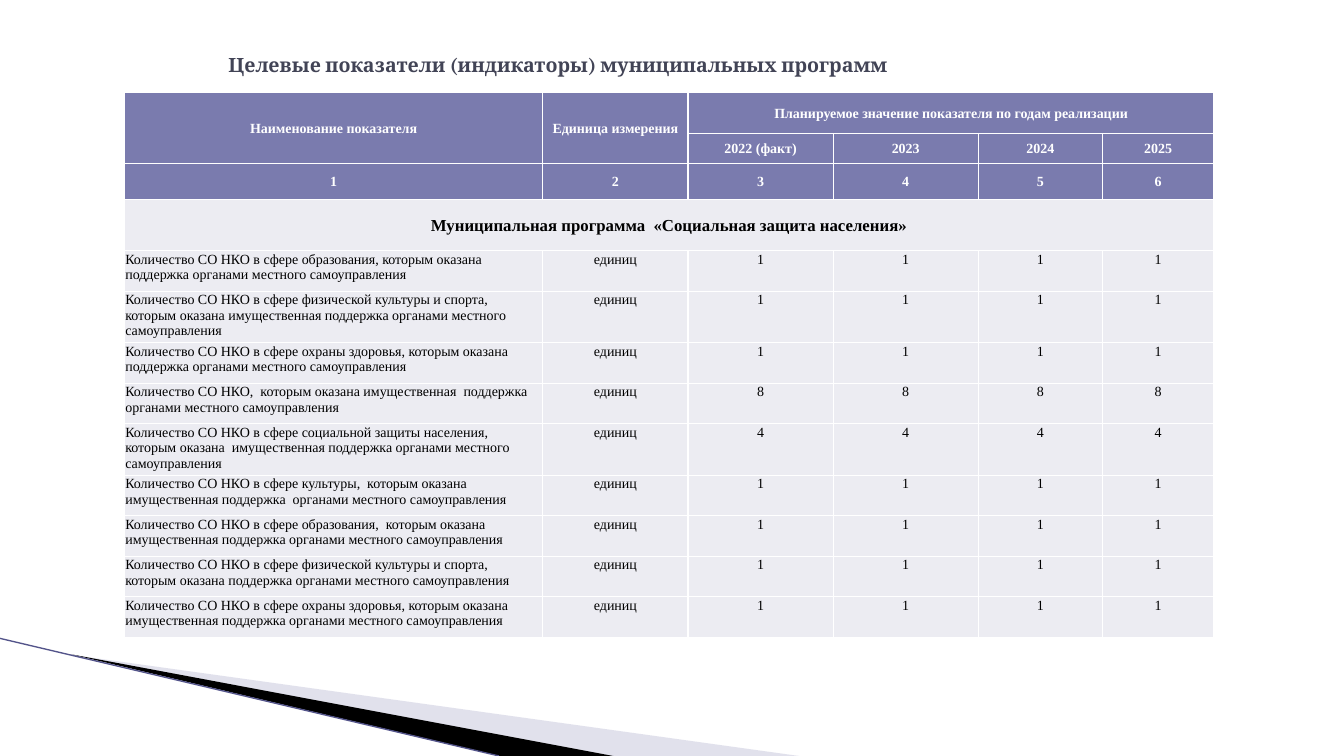
from lxml.etree import SubElement
from pptx import Presentation
from pptx.dml.color import RGBColor
from pptx.enum.shapes import MSO_CONNECTOR
from pptx.enum.text import MSO_ANCHOR, PP_ALIGN
from pptx.oxml.ns import qn
from pptx.util import Inches, Pt

COLORS = {
    "title": "424456",
    "header": "7A7BAE",
    "body": "ECECF2",
    "white": "FFFFFF",
    "black": "000000",
    "wedge": "B6B6D1",
    "edge": "53548A",
}
COLUMN_WIDTHS = [49.8, 17.28, 17.28, 17.28, 14.76, 13.3]
ROW_HEIGHTS = [4.9, 3.5, 4.32, 6.1] + [4.82] * 9
HEADER_ROWS = [
    ["Наименование показателя", "Единица измерения",
     "Планируемое значение показателя по годам реализации", "", "", ""],
    ["", "", "2022 (факт)", "2023", "2024", "2025"],
    [str(number) for number in range(1, 7)],
]
PROGRAM = "Муниципальная программа  «Социальная защита населения»"
INDICATORS = [
    ("в сфере образования, которым оказана поддержка органами", 1),
    ("в сфере физической культуры и спорта,  которым оказана имущественная поддержка органами", 1),
    ("в сфере охраны здоровья, которым оказана поддержка органами", 1),
    (",  которым оказана имущественная  поддержка органами", 8),
    ("в сфере социальной защиты населения,  которым оказана  имущественная поддержка органами", 4),
    ("в сфере культуры,  которым оказана  имущественная поддержка  органами", 1),
    ("в сфере образования,  которым оказана имущественная поддержка органами", 1),
    ("в сфере физической культуры и спорта, которым оказана поддержка органами", 1),
    ("в сфере охраны здоровья, которым оказана имущественная поддержка органами", 1),
]
MERGES = [(0, 0, 1, 0), (0, 1, 1, 1), (0, 2, 0, 5), (3, 0, 3, 5)]


class SlideBuilder:
    """Draws styled elements on one slide laid out in 160 columns by 90 rows."""

    unit = Inches(1) / 12
    title_font = "Cambria"
    table_font = "Times New Roman"

    def __init__(self, presentation):
        self.slide = presentation.slides.add_slide(presentation.slide_layouts[6])

    def grid(self, *values):
        return [round(value * self.unit) for value in values]

    def color(self, name):
        return RGBColor.from_string(COLORS[name])

    def text_run(self, paragraph, text, font, size, color, bold):
        run = paragraph.add_run()
        run.text = text
        run.font.name = font
        run.font.size = Pt(size)
        run.font.bold = bold
        run.font.color.rgb = self.color(color)

    def wedge(self, points, color, opacity=100):
        start, *rest = [self.grid(*point) for point in points]
        builder = self.slide.shapes.build_freeform(*start)
        builder.add_line_segments(rest, close=True)
        shape = builder.convert_to_shape()
        shape.shadow.inherit = False
        shape.line.fill.background()
        shape.fill.solid()
        shape.fill.fore_color.rgb = self.color(color)
        if opacity < 100:
            fill = shape._element.spPr.find(qn("a:solidFill"))
            SubElement(fill[0], qn("a:alpha"), val=str(opacity * 1000))

    def line(self, start, end, color, width):
        connector = self.slide.shapes.add_connector(
            MSO_CONNECTOR.STRAIGHT, *self.grid(*start, *end))
        connector.line.color.rgb = self.color(color)
        connector.line.width = Pt(width)
        SubElement(connector._element.spPr, qn("a:effectLst"))

    def title(self, text, left, top, width, height):
        shape = self.slide.shapes.add_textbox(*self.grid(left, top, width, height))
        frame = shape.text_frame
        frame.word_wrap = True
        frame.vertical_anchor = MSO_ANCHOR.MIDDLE
        self.text_run(frame.paragraphs[0], text, self.title_font, 14, "title", True)

    def cell(self, cell, text, fill, color="black", size=10, bold=False,
             align=PP_ALIGN.CENTER, anchor=MSO_ANCHOR.TOP):
        cell.margin_left = cell.margin_right = cell.margin_top = Inches(0.01)
        cell.margin_bottom = 0
        cell.vertical_anchor = anchor
        properties = cell._tc.get_or_add_tcPr()
        for side in ("lnL", "lnR", "lnT", "lnB"):
            border = SubElement(properties, qn(f"a:{side}"), w=str(Pt(1)))
            border_fill = SubElement(border, qn("a:solidFill"))
            SubElement(border_fill, qn("a:srgbClr"), val=COLORS["white"])
        cell.fill.solid()
        cell.fill.fore_color.rgb = self.color(fill)
        paragraph = cell.text_frame.paragraphs[0]
        paragraph.alignment = align
        if text:
            self.text_run(paragraph, text, self.table_font, size, color, bold)

    def table(self, left, top):
        box = self.grid(left, top, sum(COLUMN_WIDTHS), sum(ROW_HEIGHTS))
        table = self.slide.shapes.add_table(
            len(ROW_HEIGHTS), len(COLUMN_WIDTHS), *box).table
        for column, width in zip(table.columns, self.grid(*COLUMN_WIDTHS)):
            column.width = width
        for row, height in zip(table.rows, self.grid(*ROW_HEIGHTS)):
            row.height = height
        for row, texts in zip(table.rows, HEADER_ROWS):
            for cell, text in zip(row.cells, texts):
                self.cell(cell, text, "header", "white", bold=True,
                          anchor=MSO_ANCHOR.MIDDLE)
        for column in range(len(COLUMN_WIDTHS)):
            self.cell(table.cell(3, column), "" if column else PROGRAM, "body",
                      size=12, bold=True, anchor=MSO_ANCHOR.MIDDLE)
        for row, (subject, value) in enumerate(INDICATORS, start=4):
            space = "" if subject.startswith(",") else " "
            name = f"Количество СО НКО{space}{subject} местного самоуправления"
            self.cell(table.cell(row, 0), name, "body", align=PP_ALIGN.LEFT)
            for column, text in enumerate(["единиц"] + [str(value)] * 4, start=1):
                self.cell(table.cell(row, column), text, "body")
        for first_row, first_column, last_row, last_column in MERGES:
            table.cell(first_row, first_column).merge(
                table.cell(last_row, last_column))


def main():
    presentation = Presentation()
    presentation.slide_width = Inches(13.33)
    presentation.slide_height = Inches(7.5)
    builder = SlideBuilder(presentation)
    builder.wedge([(8.76, 78), (95.1, 90), (72.9, 90)], "wedge", 40)
    builder.wedge([(8.5, 77.9), (73, 90), (59.5, 90)], "black")
    builder.line((0, 76), (59.4, 90), "edge", 0.95)
    builder.title("Целевые показатели (индикаторы) муниципальных программ",
                  26, 3.6, 108, 8.3)
    builder.table(14.8, 11.04)
    presentation.save("out.pptx")


if __name__ == "__main__":
    main()
